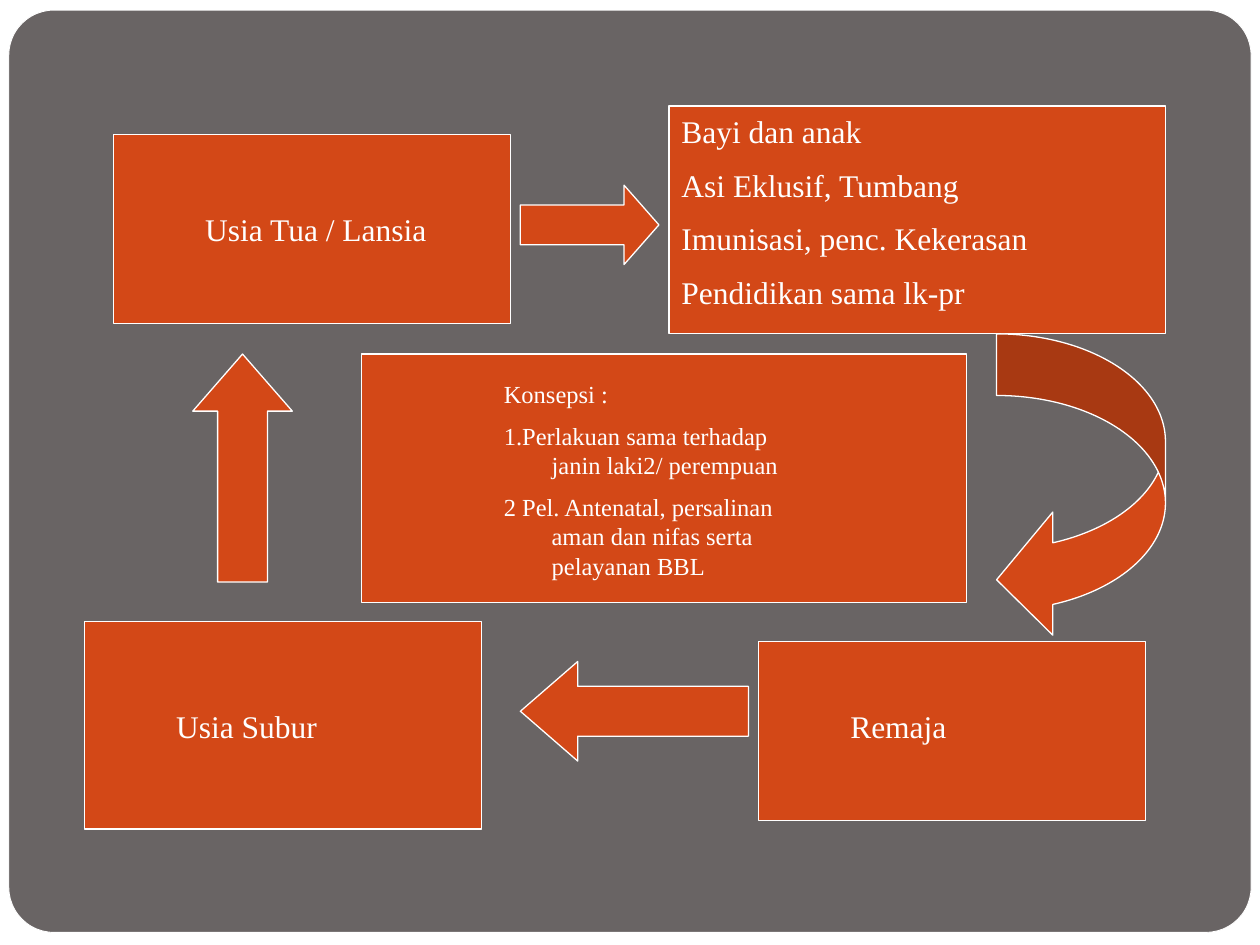
import pptx
import pptx.util
import pptx.dml.color
import pptx.enum.shapes
import pptx.enum.text
import pptx.oxml.ns
import lxml.etree

Inches = pptx.util.Inches
Pt = pptx.util.Pt
SHAPE = pptx.enum.shapes.MSO_SHAPE

FONT = "Times New Roman"
WHITE, GREY, ORANGE = "FFFFFF", "696464", "D34817"


def color(hex_value):
    return pptx.dml.color.RGBColor.from_string(hex_value)


def add_shape(slide, kind, box, fill=ORANGE, line_width=0.75, adjust=()):
    sp = slide.shapes.add_shape(kind, *(Inches(v) for v in box))
    sp.shadow.inherit = False
    sp.fill.solid()
    sp.fill.fore_color.rgb = color(fill)
    if line_width:
        sp.line.color.rgb = color(WHITE)
        sp.line.width = Pt(line_width)
    else:
        sp.line.fill.background()
    for i, value in enumerate(adjust):
        sp.adjustments[i] = value
    return sp


def add_label(slide, box, lines, size=18, hanging=0):
    tb = slide.shapes.add_textbox(*(Inches(v) for v in box))
    tf = tb.text_frame
    tf.word_wrap = True
    tf.auto_size = pptx.enum.text.MSO_AUTO_SIZE.SHAPE_TO_FIT_TEXT
    tf.text = "\n".join(lines)
    qn = pptx.oxml.ns.qn
    for p in tf.paragraphs:
        pPr = p._p.get_or_add_pPr()
        if hanging:
            pPr.set("marL", str(Inches(hanging)))
            pPr.set("indent", str(-Inches(hanging)))
        # Space before each paragraph: half a line
        before = lxml.etree.SubElement(pPr, qn("a:spcBef"))
        lxml.etree.SubElement(before, qn("a:spcPct")).set("val", "50000")
        for r in p.runs:
            r.font.name = FONT
            r.font.size = Pt(size)
            r.font.color.rgb = color(WHITE)


def add_background(slide, width, height):
    slide.background.fill.solid()
    slide.background.fill.fore_color.rgb = color(GREY)
    add_shape(slide, SHAPE.RECTANGLE, (0, 0, width, height), WHITE, 0)
    add_shape(slide, SHAPE.ROUNDED_RECTANGLE, (0.07, 0.08, width - 0.14, height - 0.18),
              GREY, 0.5, [0.049])


def add_stage(slide, box, label_box, lines, **text_format):
    """A stage of life: a box with its label, label_box being relative to the box."""
    add_shape(slide, SHAPE.RECTANGLE, box)
    dx, dy, width, height = label_box
    add_label(slide, (box[0] + dx, box[1] + dy, width, height), lines, **text_format)


def add_cycle_arrows(slide):
    arrows = [
        (SHAPE.RIGHT_ARROW, (4.13, 1.47, 1.1, 0.63), [0.5, 0.439]),
        (SHAPE.CURVED_LEFT_ARROW, (7.91, 2.65, 1.34, 2.44), [0.365, 0.729, 0.333]),
        (SHAPE.LEFT_ARROW, (4.13, 5.25, 1.81, 0.79), [0.5, 0.576]),
        (SHAPE.UP_ARROW, (1.53, 2.81, 0.79, 1.81), [0.5, 0.574]),
    ]
    for kind, box, adjust in arrows:
        add_shape(slide, kind, box, adjust=adjust)


def main():
    prs = pptx.Presentation()
    prs.slide_width, prs.slide_height = Inches(10), Inches(7.5)
    slide = prs.slides.add_slide(prs.slide_layouts[6])
    add_background(slide, 10, 7.5)

    # Life cycle, clockwise from the top left
    add_stage(slide, (0.9, 1.07, 3.15, 1.5), (0.63, 0.55, 2.05, 0.4),
              ["Usia Tua / Lansia"])
    add_stage(slide, (5.31, 0.84, 3.94, 1.81), (0, 0, 3.62, 1.76),
              ["Bayi dan anak", "Asi Eklusif, Tumbang",
               "Imunisasi, penc. Kekerasan", "Pendidikan sama lk-pr"])
    add_stage(slide, (6.02, 5.09, 3.07, 1.42), (0.63, 0.47, 1.81, 0.85), ["Remaja"])
    add_stage(slide, (0.67, 4.93, 3.15, 1.65), (0.63, 0.63, 1.97, 0.4), ["Usia Subur"])

    # Conception, in the centre
    add_stage(slide, (2.87, 2.81, 4.8, 1.97), (1.03, 0.15, 2.6, 1.73),
              ["Konsepsi :",
               "1.Perlakuan sama terhadap janin laki2/ perempuan",
               "2 Pel. Antenatal, persalinan aman dan nifas serta pelayanan BBL"],
              size=14, hanging=0.38)

    add_cycle_arrows(slide)
    prs.save("out.pptx")


if __name__ == "__main__":
    main()
